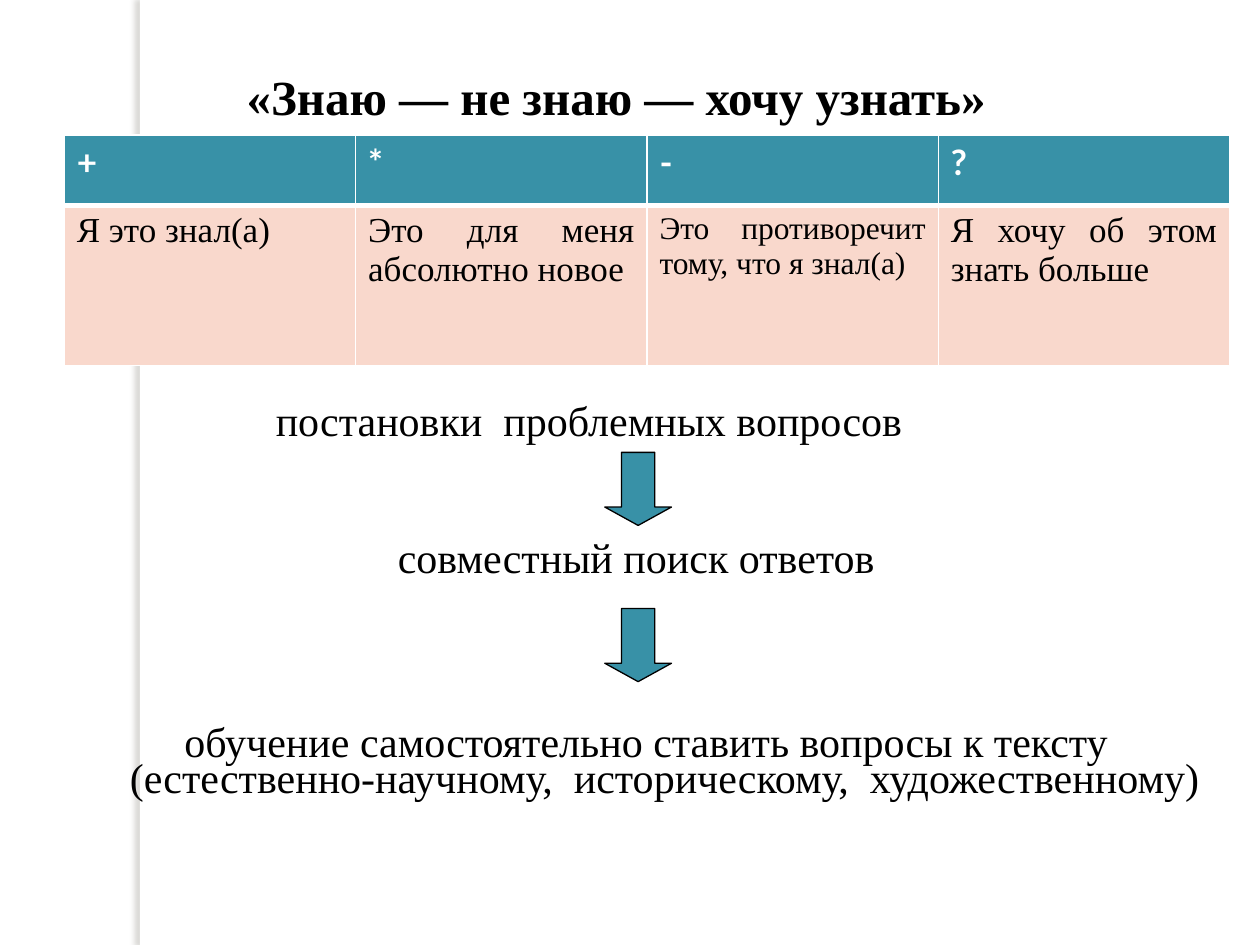
from lxml.etree import SubElement
from pptx import Presentation
from pptx.dml.color import RGBColor
from pptx.enum.shapes import MSO_SHAPE
from pptx.enum.text import MSO_ANCHOR, PP_ALIGN
from pptx.oxml.ns import qn
from pptx.util import Inches, Pt

BLACK = RGBColor(0x00, 0x00, 0x00)
WHITE = RGBColor(0xFF, 0xFF, 0xFF)
TEAL = RGBColor(0x38, 0x91, 0xA7)
PEACH = RGBColor(0xF9, 0xD8, 0xCC)
SHADOW = RGBColor(0x73, 0x6F, 0x63)
SERIF = "Times New Roman"
SANS = "Lato"
COLUMNS, ROWS = 100, 75


def write(frame, text, size=24, font=SERIF, color=BLACK, bold=False,
          align=PP_ALIGN.CENTER, spacing=None, hanging=None):
    paragraph = frame.paragraphs[0]
    paragraph.alignment = align
    if spacing:
        paragraph.line_spacing = spacing
    if hanging:
        properties = paragraph._p.get_or_add_pPr()
        properties.set("marL", str(Inches(hanging)))
        properties.set("indent", str(-Inches(hanging)))
    run = paragraph.add_run()
    run.text = text
    run.font.size = Pt(size)
    run.font.name = font
    run.font.color.rgb = color
    run.font.bold = bold


class SlideBuilder:
    def __init__(self, presentation):
        self.slide = presentation.slides.add_slide(presentation.slide_layouts[6])
        self.column = presentation.slide_width / COLUMNS
        self.row = presentation.slide_height / ROWS

    def place(self, left, top, width, height):
        return (round(left * self.column), round(top * self.row),
                round(width * self.column), round(height * self.row))

    def text(self, text, center, middle, width, height=5, **style):
        box = self.slide.shapes.add_textbox(
            *self.place(center - width / 2, middle - height / 2, width, height))
        frame = box.text_frame
        frame.word_wrap = True
        frame.vertical_anchor = MSO_ANCHOR.MIDDLE
        frame.margin_left = frame.margin_right = 0
        frame.margin_top = frame.margin_bottom = 0
        write(frame, text, **style)

    def shape(self, kind, place, fill, line=None):
        shape = self.slide.shapes.add_shape(kind, *self.place(*place))
        shape.shadow.inherit = False
        shape.fill.solid()
        shape.fill.fore_color.rgb = fill
        if line is None:
            shape.line.fill.background()
        else:
            shape.line.color.rgb = line
            shape.line.width = Pt(0.75)
        return shape

    def side_bar(self, place):
        bar = self.shape(MSO_SHAPE.RECTANGLE, place, WHITE)
        effects = bar._element.spPr.find(qn("a:effectLst"))
        shadow = SubElement(effects, qn("a:outerShdw"), blurRad=str(Pt(3)),
                            dist=str(Pt(3)), dir=str(180 * 60000),
                            algn="tl", rotWithShape="0")
        color = SubElement(shadow, qn("a:srgbClr"), val=str(SHADOW))
        SubElement(color, qn("a:alpha"), val="25000")

    def down_arrow(self, place):
        arrow = self.shape(MSO_SHAPE.DOWN_ARROW, place, TEAL, BLACK)
        arrow.adjustments[0] = 0.5
        arrow.adjustments[1] = 0.275

    def cell(self, cell, text, fill, borders, **style):
        properties = cell._tc.get_or_add_tcPr()
        for side, width in borders.items():
            line = SubElement(properties, qn(f"a:ln{side}"), w=str(Pt(width)))
            solid = SubElement(line, qn("a:solidFill"))
            SubElement(solid, qn("a:srgbClr"), val=str(WHITE))
        cell.fill.solid()
        cell.fill.fore_color.rgb = fill
        write(cell.text_frame, text, **style)

    def table(self, place, header, body, header_height):
        left, top, width, height = self.place(*place)
        table = self.slide.shapes.add_table(
            2, len(header), left, top, width, height).table
        table.rows[0].height = round(header_height * self.row)
        table.rows[1].height = height - table.rows[0].height
        for index, symbol in enumerate(header):
            self.cell(table.cell(0, index), symbol, TEAL,
                      {"L": 1, "R": 1, "T": 1, "B": 3}, size=20, font=SANS,
                      color=WHITE, bold=True, align=PP_ALIGN.LEFT)
        for index, (meaning, size) in enumerate(body):
            self.cell(table.cell(1, index), meaning, PEACH,
                      {"L": 1, "R": 1, "T": 3, "B": 1}, size=size,
                      align=PP_ALIGN.JUSTIFY)


def main():
    presentation = Presentation()
    presentation.slide_width = Inches(10)
    presentation.slide_height = Inches(7.5)
    builder = SlideBuilder(presentation)

    builder.side_bar((11.1, 0, 0.8, ROWS))
    builder.text("«Знаю — не знаю — хочу узнать»", 48.9, 7.65, 70, size=28, bold=True)
    builder.table(
        (5.1, 10.7, 92.5, 18.3),
        ["+", "*", "-", "?"],
        [("Я это знал(а)", 20), ("Это для меня абсолютно новое", 20),
         ("Это противоречит тому, что я знал(а)", 18),
         ("Я хочу об этом знать больше", 20)],
        header_height=5.6)
    builder.text("постановки  проблемных вопросов", 46.75, 33.3, 60)
    builder.text("совместный поиск ответов", 50.5, 44.2, 60)
    builder.text("обучение самостоятельно ставить вопросы к тексту "
                 "(естественно-научному,  историческому,  художественному)",
                 51.3, 60.7, 92, height=6, spacing=0.7, hanging=0.29)
    for top in (35.9, 48.3):
        builder.down_arrow((48, top, 5.3, 5.8))

    presentation.save("out.pptx")


if __name__ == "__main__":
    main()
